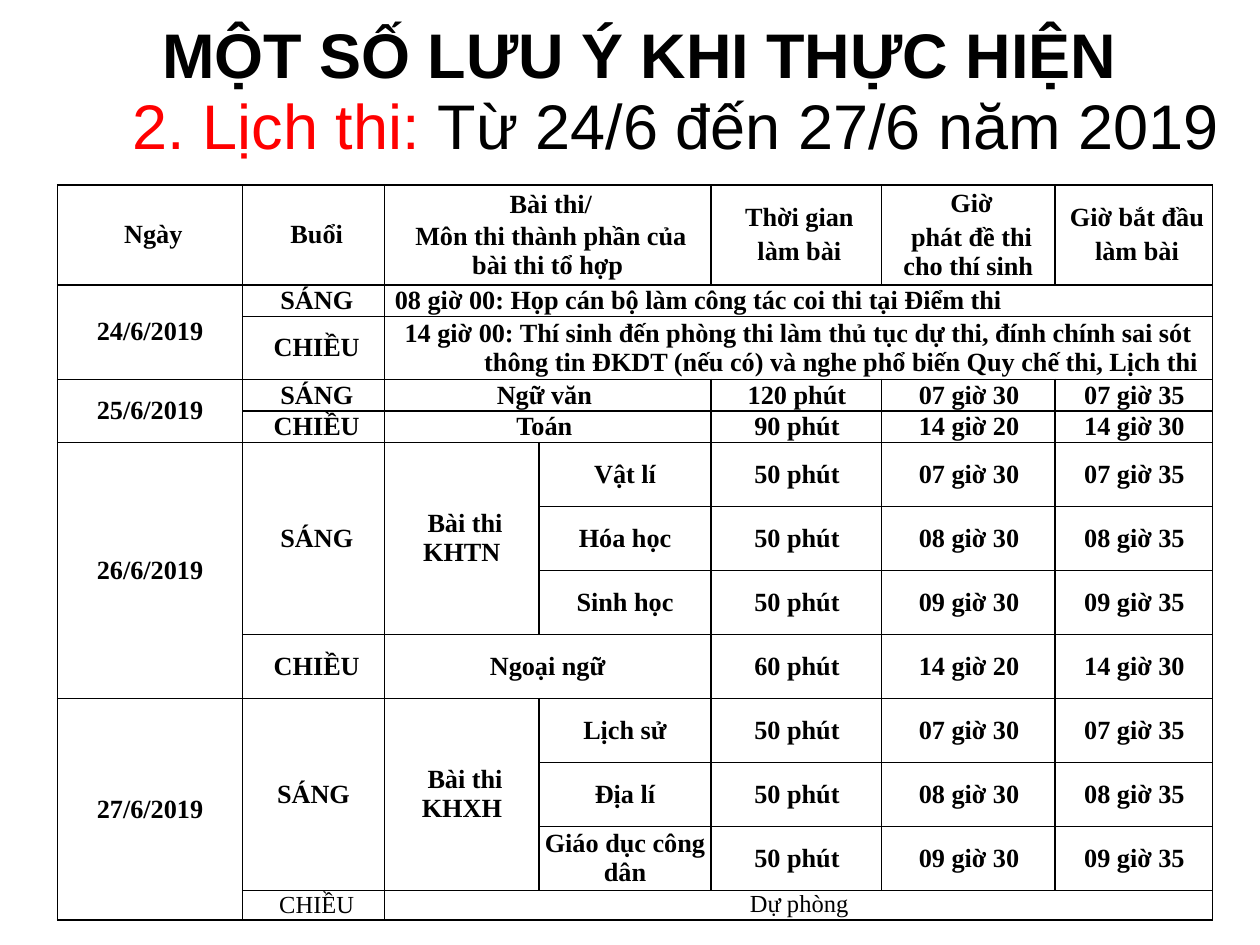
from dataclasses import dataclass
from typing import NamedTuple

from lxml.etree import SubElement
from pptx import Presentation
from pptx.dml.color import RGBColor
from pptx.enum.text import MSO_ANCHOR as Anchor, PP_ALIGN as Align
from pptx.oxml.ns import qn
from pptx.util import Cm, Length, Pt


@dataclass(frozen=True)
class Theme:
    ink: RGBColor = RGBColor(0, 0, 0)
    accent: RGBColor = RGBColor(255, 0, 0)
    paper: RGBColor = RGBColor(255, 255, 255)
    title_font: str = "Arial"
    table_font: str = "Times New Roman"
    title_size: Length = Pt(36)
    table_size: Length = Pt(15)
    reserve_size: Length = Pt(14)
    border: Length = Pt(1)


class Style(NamedTuple):
    first: float = 0
    before: float = 0
    after: float = 0
    align: Align = Align.CENTER
    left: float = 0
    bold: bool = True
    anchor: Anchor = Anchor.MIDDLE


class Entry(NamedTuple):
    row: int
    col: int
    text: str
    style: Style
    rows: int = 1
    cols: int = 1


class Exam(NamedTuple):
    row: int
    subject: str
    minutes: int
    handout: str
    start: str
    grouped: bool = True


THEME = Theme()
COLUMNS = [3.73, 2.86, 3.12, 3.46, 3.44, 3.5, 3.17]
ROWS = [1.93, 0.61, 1.22, 0.61, 0.61] + [1.29] * 7 + [0.58]

HEAD = Style(0.13, 1, 1)
HEAD_TIME = Style(0.13, 3)
PLAIN = Style(0, 5, 5)
SHIFTED = Style(0.13, 5, 5)
TIME = Style(0.03)
NOTE = Style(0.13, 5, 5, Align.LEFT)
HANGING = Style(-1.73, 5, 5, left=1.73)
RESERVE = Style(0.13, 5, 5, bold=False)
RESERVE_TOP = Style(0.03, 5, 5, bold=False, anchor=Anchor.TOP)

EXAMS = [
    Exam(3, "Ngữ văn ", 120, "07 giờ 30", "07 giờ 35", False),
    Exam(4, "Toán ", 90, "14 giờ 20", "14 giờ 30", False),
    Exam(5, "Vật lí", 50, "07 giờ 30", "07 giờ 35"),
    Exam(6, "Hóa học", 50, "08 giờ 30", "08 giờ 35"),
    Exam(7, "Sinh học", 50, "09 giờ 30", "09 giờ 35"),
    Exam(8, "Ngoại ngữ", 60, "14 giờ 20", "14 giờ 30", False),
    Exam(9, "Lịch sử", 50, "07 giờ 30", "07 giờ 35"),
    Exam(10, "Địa lí", 50, "08 giờ 30", "08 giờ 35"),
    Exam(11, "Giáo dục công dân", 50, "09 giờ 30", "09 giờ 35"),
]

ENTRIES = [
    Entry(0, 0, "Ngày", HEAD),
    Entry(0, 1, "Buổi", HEAD),
    Entry(0, 2, "Bài thi/\nMôn thi thành phần của bài thi tổ hợp", HEAD, cols=2),
    Entry(0, 4, "Thời gian\nlàm bài", HEAD_TIME),
    Entry(0, 5, "Giờ\nphát đề thi cho thí sinh", HEAD_TIME),
    Entry(0, 6, "Giờ bắt đầu\nlàm bài", HEAD_TIME),
    Entry(1, 0, "24/6/2019", PLAIN, rows=2),
    Entry(1, 1, "SÁNG", SHIFTED),
    Entry(1, 2, "08 giờ 00: Họp cán bộ làm công tác coi thi tại Điểm thi", NOTE, cols=5),
    Entry(2, 1, "CHIỀU", SHIFTED),
    Entry(2, 2, "14 giờ 00: Thí sinh đến phòng thi làm thủ tục dự thi, đính chính sai sót "
          "thông tin ĐKDT (nếu có) và nghe phổ biến Quy chế thi, Lịch thi", HANGING, cols=5),
    Entry(3, 0, "25/6/2019", PLAIN, rows=2),
    Entry(3, 1, "SÁNG", SHIFTED),
    Entry(4, 1, "CHIỀU", SHIFTED),
    Entry(5, 0, "26/6/2019", PLAIN, rows=4),
    Entry(5, 1, "SÁNG", SHIFTED, rows=3),
    Entry(5, 2, "Bài thi KHTN", SHIFTED, rows=3),
    Entry(8, 1, "CHIỀU", SHIFTED),
    Entry(9, 0, "27/6/2019", PLAIN, rows=4),
    Entry(9, 1, "SÁNG ", SHIFTED, rows=3),
    Entry(9, 2, "Bài thi KHXH", SHIFTED, rows=3),
    Entry(12, 1, "CHIỀU", RESERVE),
    Entry(12, 2, "Dự phòng", RESERVE_TOP, cols=5),
]


def exam_entries(exam: Exam) -> list[Entry]:
    col, span = (3, 1) if exam.grouped else (2, 2)
    times = [f"{exam.minutes} phút", exam.handout, exam.start]
    return [Entry(exam.row, col, exam.subject, PLAIN, cols=span)] + [
        Entry(exam.row, c, text, TIME) for c, text in enumerate(times, 4)
    ]


def set_indent(p, left: float, first: float = 0) -> None:
    pPr = p._p.get_or_add_pPr()
    pPr.set("marL", str(Cm(left)))
    pPr.set("indent", str(Cm(first)))


def set_font(font, name: str, size: Length, bold: bool) -> None:
    font.name, font.size, font.bold = name, size, bold
    font.color.rgb = THEME.ink


def format_cell(cell) -> None:
    cell.margin_left = cell.margin_right = Cm(0.08)
    cell.margin_top = cell.margin_bottom = 0
    tcPr = cell._tc.get_or_add_tcPr()
    for side in ("a:lnL", "a:lnR", "a:lnT", "a:lnB"):
        ln = SubElement(tcPr, qn(side), w=str(THEME.border))
        fill = SubElement(ln, qn("a:solidFill"))
        SubElement(fill, qn("a:srgbClr"), val=str(THEME.ink))
    cell.fill.solid()
    cell.fill.fore_color.rgb = THEME.paper


def fill_entry(table, entry: Entry) -> None:
    cell = table.cell(entry.row, entry.col)
    if entry.rows * entry.cols > 1:
        cell.merge(table.cell(entry.row + entry.rows - 1, entry.col + entry.cols - 1))
    style = entry.style
    cell.vertical_anchor = style.anchor
    cell.text = entry.text
    size = THEME.table_size if style.bold else THEME.reserve_size
    for p in cell.text_frame.paragraphs:
        p.alignment = style.align
        p.space_before, p.space_after = Pt(style.before), Pt(style.after)
        set_indent(p, style.left, style.first)
        for r in p.runs:
            set_font(r.font, THEME.table_font, size, style.bold)


def add_heading(slide, top: float, width: float, bold: bool):
    tf = slide.shapes.add_textbox(Cm(1.69), Cm(top), Cm(width), Cm(1.47)).text_frame
    tf.word_wrap = True
    p = tf.paragraphs[0]
    p.line_spacing = 0.9
    set_font(p.font, THEME.title_font, THEME.title_size, bold)
    return tf, p


def add_schedule(slide) -> None:
    frame = slide.shapes.add_table(len(ROWS), len(COLUMNS), Cm(1.16), Cm(3.73),
                                   Cm(sum(COLUMNS)), Cm(sum(ROWS)))
    table = frame.table
    table.first_row = table.horz_banding = False
    for column, width in zip(table.columns, COLUMNS):
        column.width = Cm(width)
    for row, height in zip(table.rows, ROWS):
        row.height = Cm(height)
    for cell in table.iter_cells():
        format_cell(cell)
    for entry in ENTRIES + [e for exam in EXAMS for e in exam_entries(exam)]:
        fill_entry(table, entry)


def main() -> None:
    prs = Presentation()
    prs.slide_width, prs.slide_height = Cm(25.4), Cm(19.05)
    slide = prs.slides.add_slide(prs.slide_layouts[6])

    tf, p = add_heading(slide, 0.43, 22.76, True)
    tf.vertical_anchor = Anchor.MIDDLE
    p.alignment = Align.CENTER
    p.add_run().text = "MỘT SỐ LƯU Ý KHI THỰC HIỆN "

    tf, p = add_heading(slide, 1.8, 23.29, False)
    p.space_before = Pt(7.5)
    set_indent(p, 0.74)
    r = p.add_run()
    r.text = "2. Lịch thi: "
    r.font.color.rgb = THEME.accent
    p.add_run().text = "Từ 24/6 đến 27/6 năm 2019"

    add_schedule(slide)
    prs.save("out.pptx")


if __name__ == "__main__":
    main()
